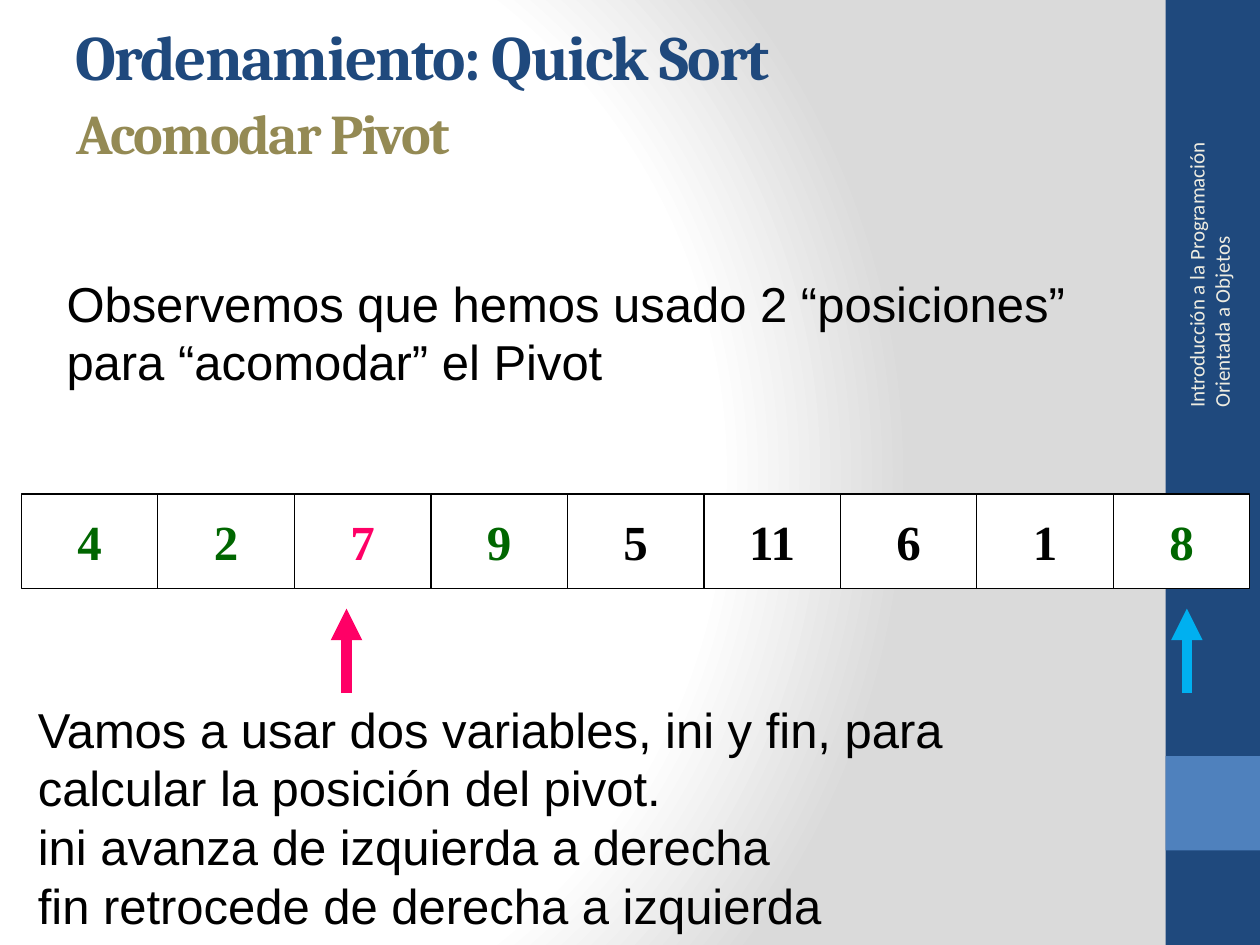
from dataclasses import dataclass

from lxml.etree import SubElement
from pptx import Presentation
from pptx.dml.color import RGBColor
from pptx.enum.shapes import MSO_CONNECTOR, MSO_SHAPE
from pptx.enum.text import MSO_ANCHOR, MSO_AUTO_SIZE, PP_ALIGN
from pptx.oxml import parse_xml
from pptx.oxml.ns import nsdecls, qn
from pptx.util import Inches, Pt


@dataclass(frozen=True)
class Theme:
    navy: str = "1F497D"
    blue: str = "4F81BD"
    cream: str = "EEECE1"
    olive: str = "948A54"
    black: str = "000000"
    white: str = "FFFFFF"
    gray: str = "DADADA"
    green: str = "006600"
    pink: str = "FF0066"
    sky: str = "00B0F0"
    title_size: int = 36
    subtitle_size: int = 32
    body_size: int = 28
    course_size: int = 12
    heading_font: str = "Cambria"
    body_font: str = "Arial"
    cell_font: str = "Times New Roman"
    course_font: str = "Calibri"


theme = Theme()


def write(holder, text, font, size, color, bold=False, align=PP_ALIGN.LEFT,
          anchor=MSO_ANCHOR.TOP, wrap=True, leading=None):
    frame = holder.text_frame
    frame.text = text
    frame.word_wrap = wrap
    frame.auto_size = MSO_AUTO_SIZE.NONE
    frame.vertical_anchor = anchor
    for paragraph in frame.paragraphs:
        paragraph.alignment = align
        paragraph.space_before = Pt(0)
        if leading:
            paragraph.line_spacing = Pt(leading)
        paragraph.font.name = font
        paragraph.font.size = Pt(size)
        paragraph.font.bold = bold
        paragraph.font.color.rgb = RGBColor.from_string(color)


def add_rectangle(left, top, width, height, fill, outline=None):
    rectangle = slide.shapes.add_shape(MSO_SHAPE.RECTANGLE, left, top, width, height)
    rectangle.shadow.inherit = False
    rectangle.fill.solid()
    rectangle.fill.fore_color.rgb = RGBColor.from_string(fill)
    if outline:
        rectangle.line.color.rgb = RGBColor.from_string(outline)
        rectangle.line.width = Pt(0.75)
    else:
        rectangle.line.fill.background()
    return rectangle


presentation = Presentation()
presentation.slide_width = Inches(10)
presentation.slide_height = Inches(7.5)
slide = presentation.slides.add_slide(presentation.slide_layouts[1])

slide.background.fill.gradient()
stops = "".join(
    f'<a:gs pos="{position * 1000}"><a:srgbClr val="{color}"/></a:gs>'
    for position, color in ((0, theme.white), (75, theme.white), (100, theme.gray))
)
glow = parse_xml(
    f'<a:gradFill {nsdecls("a")} rotWithShape="1"><a:gsLst>{stops}</a:gsLst>'
    '<a:path path="circle"><a:fillToRect l="20000" t="50000" r="100000" b="50000"/>'
    '</a:path></a:gradFill>'
)
linear = slide.element.xpath(".//p:bgPr/a:gradFill")[0]
linear.getparent().replace(linear, glow)

add_rectangle(Inches(9.25), 0, Inches(0.75), Inches(7.5), theme.navy)
add_rectangle(Inches(9.25), Inches(6), Inches(0.75), Inches(0.75), theme.blue)

course = slide.shapes.add_textbox(Inches(8.26), Inches(1.8), Inches(2.67), Inches(0.4))
course.rotation = 270
write(course, "Introducción a la Programación Orientada a Objetos",
      theme.course_font, theme.course_size, theme.cream, anchor=MSO_ANCHOR.MIDDLE)

values = (
    (4, theme.green), (2, theme.green), (7, theme.pink),
    (9, theme.green), (5, theme.black), (11, theme.black),
    (6, theme.black), (1, theme.black), (8, theme.green),
)
cell_width = Inches(9.75) // len(values)
for index, (value, color) in enumerate(values):
    cell = add_rectangle(Inches(0.17) + index * cell_width, Inches(3.92),
                         cell_width, Inches(0.75), theme.white, theme.black)
    write(cell, str(value), theme.cell_font, theme.body_size, color, bold=True,
          align=PP_ALIGN.CENTER, anchor=MSO_ANCHOR.MIDDLE, wrap=False)

for x, color in ((2.75, theme.pink), (9.42, theme.sky)):
    pointer = slide.shapes.add_connector(
        MSO_CONNECTOR.STRAIGHT, Inches(x), Inches(5.5), Inches(x), Inches(4.83))
    pointer.line.color.rgb = RGBColor.from_string(color)
    pointer.line.width = Pt(6)
    SubElement(pointer.line._get_or_add_ln(), qn("a:tailEnd"), type="triangle")
    SubElement(pointer.element.spPr, qn("a:effectLst"))

title = slide.shapes.title
title.left, title.top = Inches(0.5), Inches(0.09)
title.width, title.height = Inches(8.98), Inches(0.66)
subtitle = slide.shapes.add_textbox(Inches(0.51), Inches(0.73), Inches(8.98), Inches(0.66))
for heading, text, size, color in (
    (title, "Ordenamiento: Quick Sort", theme.title_size, theme.navy),
    (subtitle, "Acomodar Pivot", theme.subtitle_size, theme.olive),
):
    write(heading, text, theme.heading_font, size, color, bold=True)
    heading.element.xpath(".//a:defRPr")[0].set("spc", "-100")

observation = slide.shapes.add_textbox(Inches(0.43), Inches(2.12), Inches(8.54), Inches(1.04))
write(observation, "Observemos que hemos usado 2 “posiciones” para “acomodar” el Pivot",
      theme.body_font, theme.body_size, theme.black, leading=33.5)

steps = slide.placeholders[1]
steps.left, steps.top = Inches(0.2), Inches(5.5)
steps.width, steps.height = Inches(8.78), Inches(1.99)
write(steps, "\n".join((
    "Vamos a usar dos variables, ini y fin, para calcular la posición del pivot.",
    "ini avanza de izquierda a derecha",
    "fin retrocede de derecha a izquierda",
)), theme.body_font, theme.body_size, theme.black, leading=33.5)
for properties in steps.element.xpath(".//a:pPr"):
    properties.set("marL", "0")
    properties.set("indent", "0")
    properties.find(qn("a:defRPr")).addprevious(
        parse_xml(f'<a:buNone {nsdecls("a")}/>'))

presentation.save("out.pptx")
